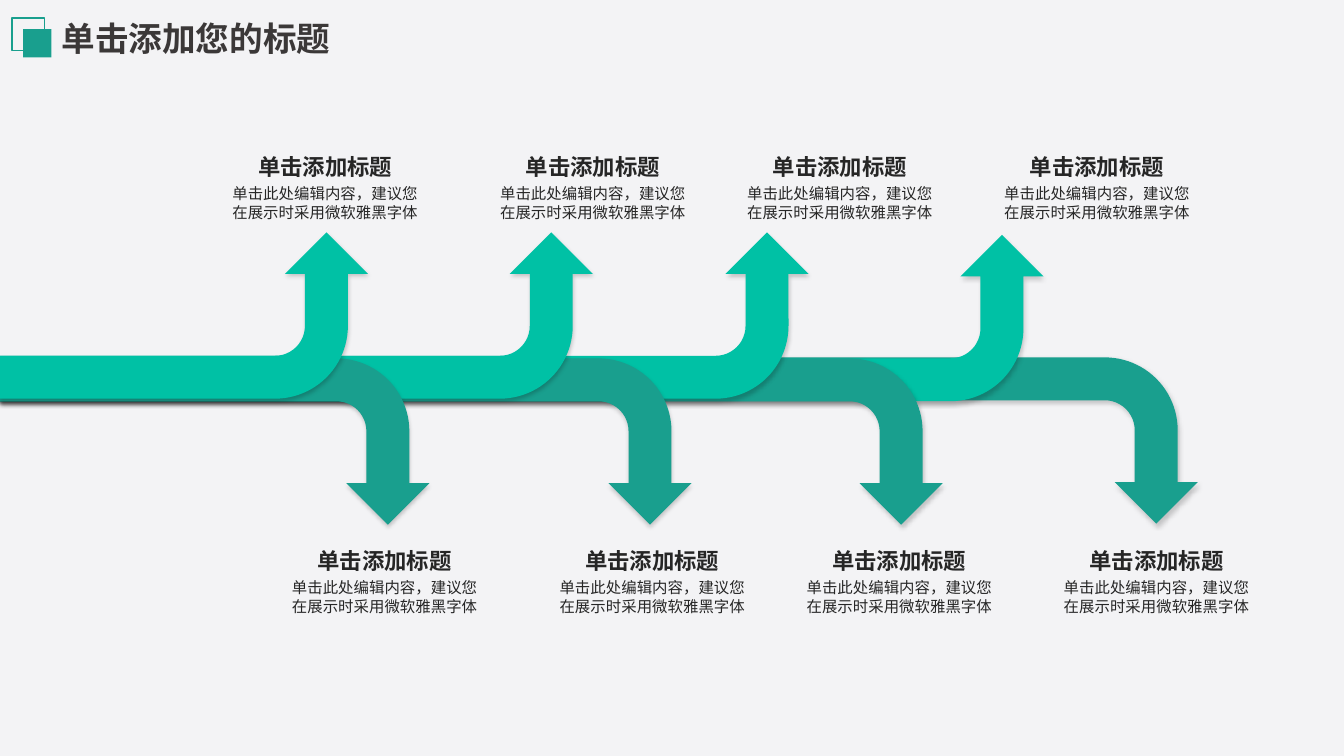
from dataclasses import dataclass

from lxml import etree
from pptx import Presentation
from pptx import util as u
from pptx.dml.color import RGBColor
from pptx.enum import shapes, text
from pptx.oxml.ns import qn


@dataclass(frozen=True)
class Theme:
    background: str = "F3F3F5"
    up: str = "00C1A5"
    down: str = "199F8E"
    ink: str = "262626"
    title_ink: str = "3B3838"
    heading_font: str = "Noto Sans CJK SC"
    body_font: str = "Arial"
    title_size: int = 24
    heading_size: int = 16
    body_size: int = 11


THEME = Theme()
TITLE = "单击添加您的标题"
HEADING = "单击添加标题"
BODY = "单击此处编辑内容，建议您在展示时采用微软雅黑字体"

ARROW_HEIGHT = 1.65
# Each step: length and middle height of its arrows, and centre of its upper caption
STEPS = [
    {"up": (3.65, 3.13), "down": (4.26, 4.38), "caption": 3.225},
    {"up": (5.88, 3.13), "down": (6.86, 4.38), "caption": 5.88},
    {"up": (8.02, 3.13), "down": (9.35, 4.38), "caption": 8.33},
    {"up": (10.35, 3.155), "down": (11.88, 4.37), "caption": 10.88},
]
DOWN_SHIFT = 0.59
UP_TOP, DOWN_TOP = 1.47, 5.38


def write(frame, words, size, color, font, bold=False, align=text.PP_ALIGN.CENTER, wrap=True):
    """Fill a text frame with one formatted paragraph."""
    frame.word_wrap = wrap
    frame.auto_size = text.MSO_AUTO_SIZE.SHAPE_TO_FIT_TEXT
    frame.vertical_anchor = text.MSO_ANCHOR.TOP
    paragraph = frame.paragraphs[0]
    paragraph.alignment = align
    run = paragraph.add_run()
    run.text = words
    run.font.size = u.Pt(size)
    run.font.bold = bold
    run.font.name = font
    run.font.color.rgb = RGBColor.from_string(color)
    east_asian = etree.SubElement(run.font._element, qn("a:ea"))
    east_asian.set("typeface", font)


def place(shape, left, top, width, height):
    shape.left, shape.top = u.Inches(left), u.Inches(top)
    shape.width, shape.height = u.Inches(width), u.Inches(height)


def add_square(slide, left, top, side, fill=None, line=None):
    square = slide.shapes.add_shape(
        shapes.MSO_SHAPE.RECTANGLE, u.Inches(left), u.Inches(top), u.Inches(side), u.Inches(side))
    square.shadow.inherit = False
    if fill:
        square.fill.solid()
        square.fill.fore_color.rgb = RGBColor.from_string(fill)
    else:
        square.fill.background()
    if line:
        square.line.color.rgb = RGBColor.from_string(line)
        square.line.width = u.Pt(1)
    else:
        square.line.fill.background()


def add_soft_shadow(shape):
    shape.shadow.inherit = False
    effects = shape._element.spPr.find(qn("a:effectLst"))
    shadow = etree.SubElement(
        effects, qn("a:outerShdw"), blurRad=str(u.Pt(3.1)), dist=str(u.Pt(1.8)),
        dir="5400000", algn="t", rotWithShape="0")
    black = etree.SubElement(shadow, qn("a:srgbClr"), val="000000")
    etree.SubElement(black, qn("a:alpha"), val="20000")


def add_branch(slide, length, middle, color, upward):
    """A bent arrow that runs from the left edge and turns up or down."""
    branch = slide.shapes.add_shape(
        shapes.MSO_SHAPE.BENT_ARROW,
        u.Inches((length - ARROW_HEIGHT) / 2), u.Inches(middle - length / 2),
        u.Inches(ARROW_HEIGHT), u.Inches(length))
    for index, value in enumerate((0.258, 0.25, 0.25, 0.438)):
        branch.adjustments[index] = value
    branch.rotation = 90 if upward else 270
    frame = branch._element.spPr.find(qn("a:xfrm"))
    frame.set("flipH", "1")
    if not upward:
        frame.set("flipV", "1")
    branch.fill.solid()
    branch.fill.fore_color.rgb = RGBColor.from_string(color)
    branch.line.fill.background()
    add_soft_shadow(branch)


def add_caption(slide, center, top):
    heading = slide.shapes.add_textbox(0, 0, 0, 0)
    write(heading.text_frame, HEADING, THEME.heading_size, THEME.ink,
          THEME.heading_font, bold=True, wrap=False)
    place(heading, center - 1.55 / 2, top, 1.55, 0.37)
    body = slide.shapes.add_textbox(0, 0, 0, 0)
    write(body.text_frame, BODY, THEME.body_size, THEME.ink, THEME.body_font)
    place(body, center - 2.15 / 2, top + 0.31, 2.15, 0.47)


def main():
    deck = Presentation()
    deck.slide_width, deck.slide_height = u.Inches(13.33), u.Inches(7.5)
    slide = deck.slides.add_slide(deck.slide_layouts[5])
    slide.background.fill.solid()
    slide.background.fill.fore_color.rgb = RGBColor.from_string(THEME.background)

    # Title with its pair of squares
    add_square(slide, 0.23, 0.29, 0.28, fill=THEME.down)
    add_square(slide, 0.12, 0.18, 0.32, line=THEME.down)
    title = slide.shapes.title
    write(title.text_frame, TITLE, THEME.title_size, THEME.title_ink,
          THEME.heading_font, bold=True, align=text.PP_ALIGN.LEFT)
    place(title, 0.51, 0.13, 3.25, 0.5)

    # Branches, longest first so that shorter ones lie on top
    for step in reversed(STEPS):
        add_branch(slide, *step["down"], THEME.down, upward=False)
        add_branch(slide, *step["up"], THEME.up, upward=True)

    # Captions below and above the branches
    for step in STEPS:
        add_caption(slide, step["caption"] + DOWN_SHIFT, DOWN_TOP)
        add_caption(slide, step["caption"], UP_TOP)

    deck.save("out.pptx")


if __name__ == "__main__":
    main()
